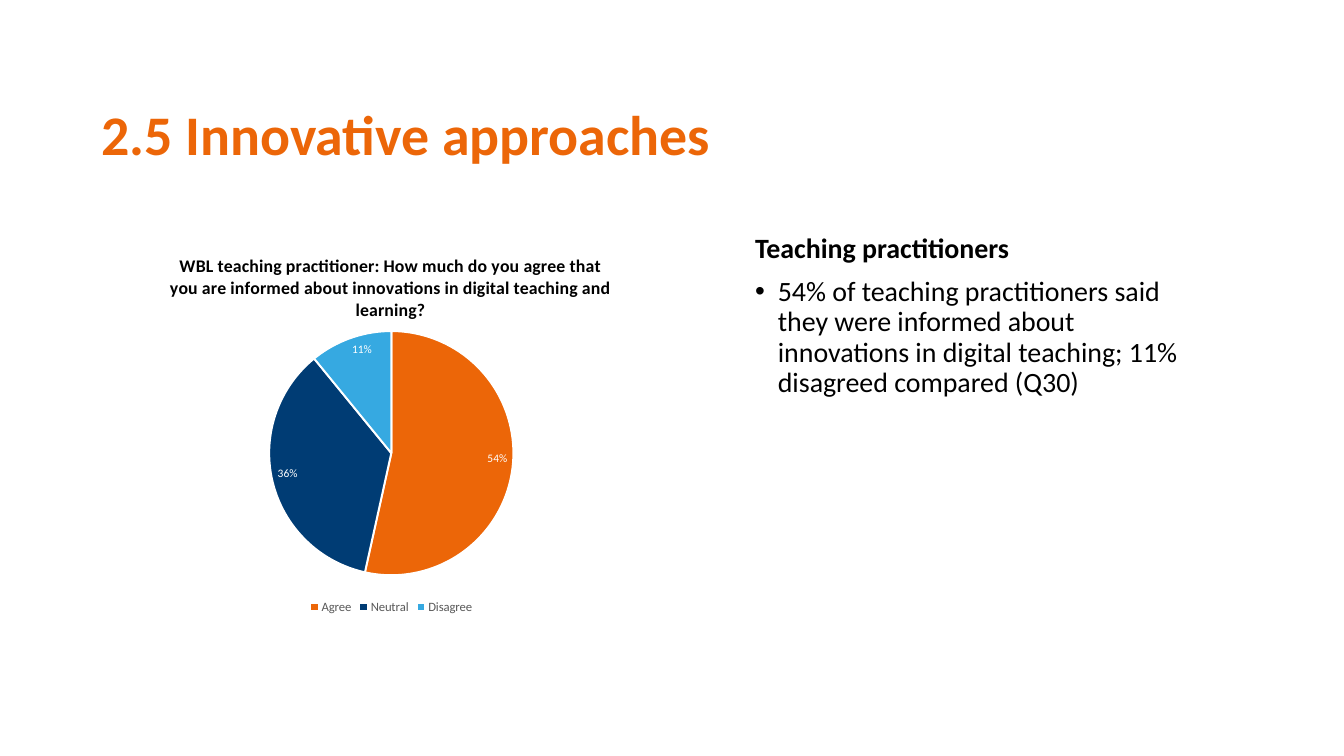
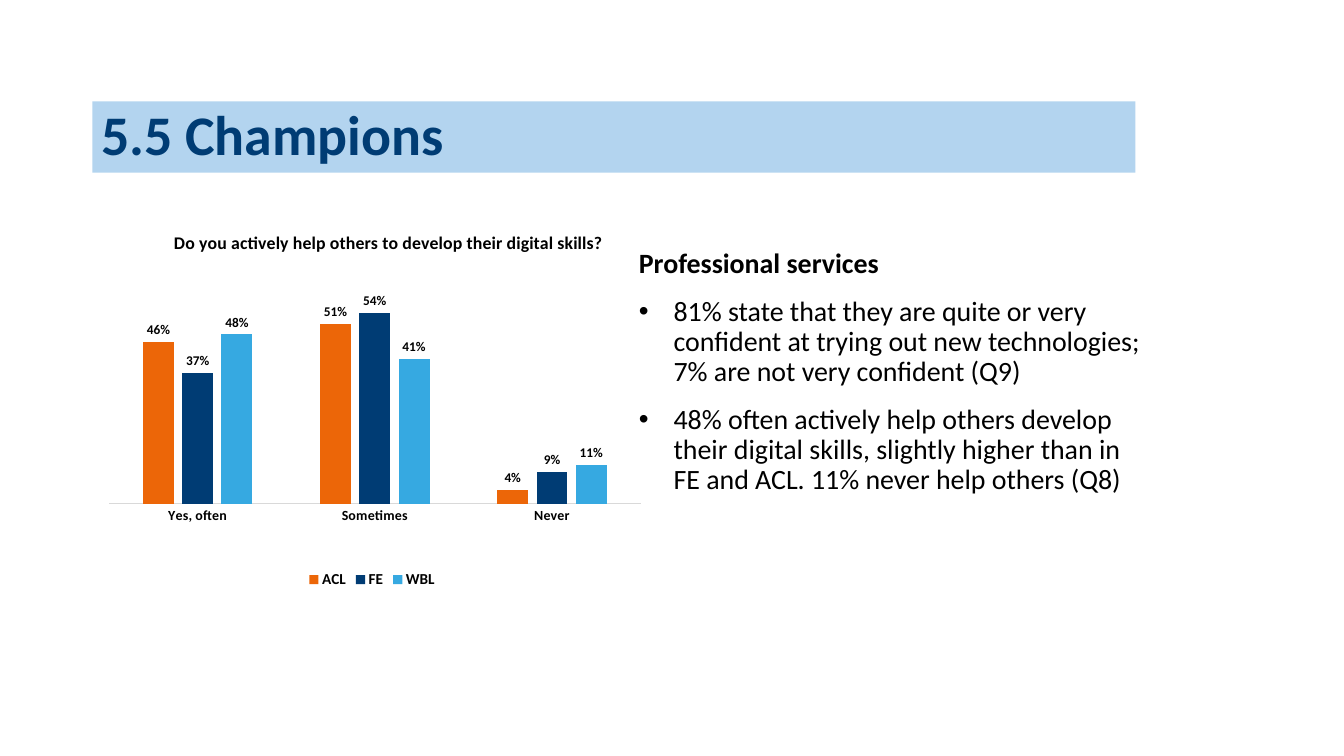
from dataclasses import dataclass

from lxml import etree
from pptx import Presentation
from pptx.chart.data import CategoryChartData
from pptx.dml.color import RGBColor
from pptx.enum.chart import XL_CHART_TYPE, XL_LABEL_POSITION, XL_LEGEND_POSITION, XL_TICK_MARK
from pptx.enum.text import MSO_ANCHOR
from pptx.oxml.ns import qn
from pptx.util import Inches, Pt

PIE = XL_CHART_TYPE.PIE
COLUMNS = XL_CHART_TYPE.COLUMN_CLUSTERED
INSIDE_END = XL_LABEL_POSITION.INSIDE_END
OUTSIDE_END = XL_LABEL_POSITION.OUTSIDE_END
LEGEND_BOTTOM = XL_LEGEND_POSITION.BOTTOM
NO_TICK = XL_TICK_MARK.NONE
MIDDLE = MSO_ANCHOR.MIDDLE

ORANGE = RGBColor(0xEC, 0x66, 0x08)
NAVY = RGBColor(0x00, 0x3C, 0x74)
SKY = RGBColor(0x36, 0xA9, 0xE1)
PALE_BLUE = RGBColor(0xB3, 0xD4, 0xEF)
BLACK = RGBColor(0x00, 0x00, 0x00)
WHITE = RGBColor(0xFF, 0xFF, 0xFF)
GREY = RGBColor(0x59, 0x59, 0x59)
AXIS_GREY = RGBColor(0xD9, 0xD9, 0xD9)
PALETTE = (ORANGE, NAVY, SKY)

FONT = "Calibri"
LINE_SPACING = 0.9
SLIDE_WIDTH = Inches(14.7)
SLIDE_HEIGHT = Inches(8.27)


@dataclass
class Box:
    """A region in percent of the slide's width and height."""
    left: float
    top: float
    width: float
    height: float

    def place(self):
        return (int(SLIDE_WIDTH * self.left / 100), int(SLIDE_HEIGHT * self.top / 100),
                int(SLIDE_WIDTH * self.width / 100), int(SLIDE_HEIGHT * self.height / 100))


TITLE_BOX = Box(6.87, 13.42, 77.62, 9.43)


def style_font(font, size, color, bold=False):
    font.name = FONT
    font.size = Pt(size)
    font.color.rgb = color
    font.bold = bold


def add_text_box(slide, box):
    text_box = slide.shapes.add_textbox(*box.place())
    text_box.text_frame.word_wrap = True
    return text_box


def add_title(slide, text, color, band=None):
    title = add_text_box(slide, TITLE_BOX)
    if band is not None:
        title.fill.solid()
        title.fill.fore_color.rgb = band
    frame = title.text_frame
    frame.vertical_anchor = MIDDLE
    frame.text = text
    heading = frame.paragraphs[0]
    heading.line_spacing = LINE_SPACING
    style_font(heading.runs[0].font, 44, color, True)


def add_bullet(paragraph, indent):
    properties = paragraph._p.get_or_add_pPr()
    properties.set("marL", str(Inches(indent)))
    properties.set("indent", str(-Inches(indent)))
    etree.SubElement(properties, qn("a:buFont")).set("typeface", "Arial")
    etree.SubElement(properties, qn("a:buChar")).set("char", "•")


def add_findings(slide, box, heading, findings, indent, gap):
    frame = add_text_box(slide, box).text_frame
    for index, text in enumerate([heading, *findings]):
        paragraph = frame.add_paragraph() if index else frame.paragraphs[0]
        paragraph.text = text
        if index:
            add_bullet(paragraph, indent)
            paragraph.space_before = Pt(gap)
        paragraph.line_spacing = LINE_SPACING
        style_font(paragraph.runs[0].font, 22, BLACK, index == 0)


def set_layout(parent, position, inner=False, **shares):
    for old in parent.findall(qn("c:layout")):
        parent.remove(old)
    layout = etree.Element(qn("c:layout"))
    manual = etree.SubElement(layout, qn("c:manualLayout"))
    settings = {"layoutTarget": "inner"} if inner else {}
    settings.update(xMode="edge", yMode="edge", **shares)
    for tag, value in settings.items():
        etree.SubElement(manual, qn(f"c:{tag}")).set("val", str(value))
    parent.insert(position, layout)


def add_survey_chart(slide, box, kind, question, categories, answers, title_at, plot_at):
    data = CategoryChartData(number_format="0%")
    data.categories = categories
    for name, values in answers.items():
        data.add_series(name, values)
    chart = slide.shapes.add_chart(kind, *box.place(), data).chart
    style_font(chart.font, 10, BLACK)

    chart.has_title = True
    chart.chart_title.include_in_layout = False
    title_frame = chart.chart_title.text_frame
    title_frame.text = question
    style_font(title_frame.paragraphs[0].runs[0].font, 14, BLACK, True)
    set_layout(chart.chart_title._element, 1, **title_at)
    set_layout(chart._chartSpace.chart.plotArea, 0, inner=True, **plot_at)

    chart.has_legend = True
    chart.legend.position = LEGEND_BOTTOM
    chart.legend.include_in_layout = False
    return chart


def show_labels(plot, position, size, color, bold=False):
    plot.has_data_labels = True
    labels = plot.data_labels
    labels.show_value = True
    labels.show_percentage = False
    labels.number_format = "0%"
    labels.number_format_is_linked = False
    labels.position = position
    style_font(labels.font, size, color, bold)


def add_agreement_pie(slide, box):
    chart = add_survey_chart(
        slide, box, PIE,
        "WBL teaching practitioner: How much do you agree that you are informed "
        "about innovations in digital teaching and learning?",
        ("Agree", "Neutral", "Disagree"), {"Series 1": (0.54, 0.36, 0.11)},
        {"x": 0.1, "y": 0.05}, {"x": 0.28, "y": 0.26, "w": 0.44, "h": 0.63})
    style_font(chart.legend.font, 10, GREY)
    pie = chart.plots[0]
    pie.vary_by_categories = True
    for index, color in enumerate(PALETTE):
        slice_format = pie.series[0].points[index].format
        slice_format.fill.solid()
        slice_format.fill.fore_color.rgb = color
        slice_format.line.color.rgb = WHITE
        slice_format.line.width = Pt(1.5)
    show_labels(pie, INSIDE_END, 9, WHITE)


def add_help_columns(slide, box):
    chart = add_survey_chart(
        slide, box, COLUMNS,
        "Do you actively help others to develop their digital skills?",
        ("Yes, often", "Sometimes", "Never"),
        {"ACL": (0.46, 0.51, 0.04), "FE": (0.37, 0.54, 0.09), "WBL": (0.48, 0.41, 0.11)},
        {"x": 0.14, "y": 0.05}, {"x": 0.03, "y": 0.22, "w": 0.95, "h": 0.55})
    style_font(chart.legend.font, 12, BLACK, True)
    columns = chart.plots[0]
    columns.vary_by_categories = False
    columns.gap_width = 219
    columns.overlap = -27
    for series, color in zip(columns.series, PALETTE):
        series.format.fill.solid()
        series.format.fill.fore_color.rgb = color
    show_labels(columns, OUTSIDE_END, 10.5, BLACK, True)

    answer_axis = chart.category_axis
    answer_axis.major_tick_mark = NO_TICK
    answer_axis.format.line.color.rgb = AXIS_GREY
    answer_axis.format.line.width = Pt(0.75)
    style_font(answer_axis.tick_labels.font, 11, BLACK, True)
    share_axis = chart.value_axis
    share_axis.minimum_scale = 0
    share_axis.maximum_scale = 0.6
    share_axis.has_major_gridlines = False
    share_axis.visible = False


def build_innovation_slide(slide):
    add_title(slide, "2.5 Innovative approaches", ORANGE)
    add_agreement_pie(slide, Box(8.23, 30.47, 41.77, 51.27))
    add_findings(
        slide, Box(55.51, 30.47, 34.63, 54.29), "Teaching practitioners",
        ["54% of teaching practitioners said they were informed about innovations "
         "in digital teaching; 11% disagreed compared (Q30)"],
        indent=0.25, gap=10)


def build_champions_slide(slide):
    add_title(slide, "5.5 Champions", NAVY, PALE_BLUE)
    add_help_columns(slide, Box(6.87, 27.45, 41.63, 50.91))
    add_findings(
        slide, Box(46.87, 32.41, 38.78, 60.46), "Professional services",
        ["81% state that they are quite or very confident at trying out new "
         "technologies; 7% are not very confident (Q9)",
         "48% often actively help others develop their digital skills, slightly "
         "higher than in FE and ACL. 11% never help others (Q8)"],
        indent=0.38, gap=13.8)


def main():
    presentation = Presentation()
    presentation.slide_width = SLIDE_WIDTH
    presentation.slide_height = SLIDE_HEIGHT
    blank = presentation.slide_layouts[6]
    for build in (build_innovation_slide, build_champions_slide):
        build(presentation.slides.add_slide(blank))
    presentation.save("out.pptx")


if __name__ == "__main__":
    main()
